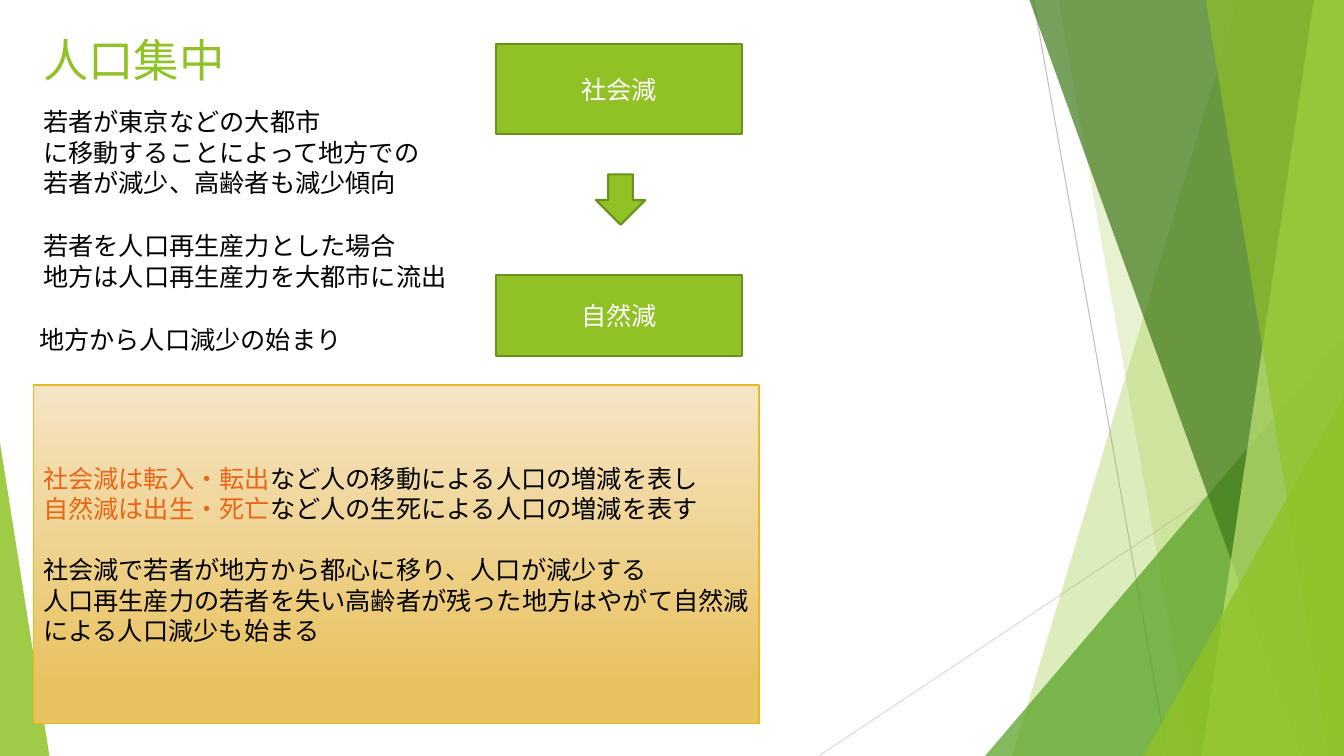
from lxml import etree
from pptx import Presentation
from pptx.dml.color import RGBColor
from pptx.enum.shapes import MSO_CONNECTOR, MSO_SHAPE
from pptx.enum.text import MSO_ANCHOR, PP_ALIGN
from pptx.oxml.ns import qn
from pptx.util import Inches, Pt

W, H = 13.33, 7.5
COLORS = {
    "lime": "90C226", "green": "54A021", "forest": "3F7819", "pale": "C0E474",
    "edge": "6B901C", "gold_edge": "E6B91E", "cream": "F5E5C5", "gold": "E9C260",
    "orange": "E76618", "black": "000000", "white": "FFFFFF",
    "gray": "BFBFBF", "light_gray": "D9D9D9",
}
CJK, LATIN = "Noto Sans CJK JP", "Roboto"

# Content: a paragraph is a list of (text, colour) runs
TITLE = "人口集中"
NOTES = [  # left, top, width, height, lines
    (0.33, 1.01, 4.97, 1.01, ["若者が東京などの大都市", "に移動することによって地方での",
                              "若者が減少、高齢者も減少傾向"]),
    (0.33, 2.24, 4.88, 0.71, ["若者を人口再生産力とした場合", "地方は人口再生産力を大都市に流出"]),
    (0.29, 3.17, 4.97, 0.4, ["地方から人口減少の始まり"]),
]
STEPS = [("社会減", 0.44, 0.89), ("自然減", 2.73, 0.8)]  # label, top, height
SUMMARY = [
    [("社会減は転入・転出".replace("・", "・"), "orange"), ("など人の移動による人口の増減を表し", "black")],
    [("自然減は出生・死亡".replace("・", "・"), "orange"), ("など人の生死による人口の増減を表す", "black")],
    [("社会減で若者が地方から都心に移り、人口が減少する", "black")],
    [("人口再生産力の若者を失い高齢者が残った地方はやがて自然減による人口減少も始まる", "black")],
]
SUMMARY_BREAK = 2  # paragraph that follows a gap

# Background, back to front
RAYS = [(10.25, 0, 11.58, H, "gray"), (W, 4.03, 8.12, H, "light_gray")]
FACETS = [  # bands: top x, bottom x; wedges: left, top, width, apex
    ("band", (12.28, 10.04), "lime", 30),
    ("band", (10.5, 11.83), "lime", 20),
    ("wedge", (9.77, 3.33, 3.56, 1), "green", 72),
    ("band", (10.21, 12.91), "forest", 70),
    ("band", (13.03, 11.92), "pale", 70),
    ("band", (11.96, 13.18), "lime", 65),
    ("wedge", (11.34, 3.93, 1.99, 1), "lime", 80),
    ("wedge", (0, 4.39, 0.49, 0), "lime", 85),
]

prs = Presentation()
prs.slide_width, prs.slide_height = Inches(W), Inches(H)
slide = prs.slides.add_slide(prs.slide_layouts[6])
shapes = slide.shapes


def rgb(name):
    return RGBColor.from_string(COLORS[name])


def paint(sp, fill, line=None, weight=1.5, alpha=None):
    sp.shadow.inherit = False
    sp.fill.solid()
    sp.fill.fore_color.rgb = rgb(fill)
    if alpha:
        clr = sp.fill._xPr.find(qn("a:solidFill"))[0]
        etree.SubElement(clr, qn("a:alpha"), val=str(alpha * 1000))
    if line:
        sp.line.color.rgb = rgb(line)
        sp.line.width = Pt(weight)
    else:
        sp.line.fill.background()


def add_box(kind, *box):
    return shapes.add_shape(kind, *map(Inches, box))


def write(sp, paragraphs, font, size=18, align=PP_ALIGN.LEFT, anchor=MSO_ANCHOR.MIDDLE):
    tf = sp.text_frame
    tf.word_wrap = True
    tf.vertical_anchor = anchor
    for i, runs in enumerate(paragraphs):
        p = tf.paragraphs[0] if i == 0 else tf.add_paragraph()
        p.alignment = align
        for text, color in runs:
            r = p.add_run()
            r.text = text
            r.font.name, r.font.size = font, Pt(size)
            r.font.color.rgb = rgb(color)
            r.font._element.find(qn("a:latin")).addnext(
                etree.Element(qn("a:ea"), typeface=CJK))
    return tf


# Thin rays
for x1, y1, x2, y2, color in RAYS:
    ray = shapes.add_connector(MSO_CONNECTOR.STRAIGHT, *map(Inches, (x1, y1, x2, y2)))
    ray.line.color.rgb = rgb(color)
    ray.line.width = Pt(0.75)
    etree.SubElement(ray._element.spPr, qn("a:effectLst"))

# Translucent facets
for kind, geometry, color, alpha in FACETS:
    if kind == "band":
        top_x, bottom_x = geometry
        corners = [(Inches(x), Inches(y)) for x, y in
                   ((top_x, 0), (W, 0), (W, H), (bottom_x, H))]
        builder = shapes.build_freeform(*corners[0])
        builder.add_line_segments(corners[1:], close=True)
        sp = builder.convert_to_shape()
    else:
        left, top, width, apex = geometry
        sp = add_box(MSO_SHAPE.ISOSCELES_TRIANGLE, left, top, width, H - top)
        sp.adjustments[0] = apex
    paint(sp, color, alpha=alpha)

# Title and notes
title = shapes.add_textbox(*map(Inches, (0.33, 0.26, 2.68, 0.65)))
write(title, [[(TITLE, "lime")]], LATIN, 32.4)
for *box, lines in NOTES:
    note = shapes.add_textbox(*map(Inches, box))
    write(note, [[(line, "black")] for line in lines], CJK, anchor=MSO_ANCHOR.TOP)

# Two steps joined by an arrow
for label, top, height in STEPS:
    step = add_box(MSO_SHAPE.RECTANGLE, 4.92, top, 2.44, height)
    paint(step, "lime", "edge")
    write(step, [[(label, "white")]], LATIN, align=PP_ALIGN.CENTER)
arrow = add_box(MSO_SHAPE.DOWN_ARROW, 5.91, 1.73, 0.49, 0.5)
paint(arrow, "lime", "edge")

# Summary panel
panel = add_box(MSO_SHAPE.RECTANGLE, 0.33, 3.82, 7.2, 3.36)
paint(panel, "gold", "gold_edge", 1)
panel.fill.gradient()
panel.fill.gradient_angle = 270
for stop, (position, color) in zip(panel.fill.gradient_stops, [(0, "cream"), (0.88, "gold")]):
    stop.position = position
    stop.color.rgb = rgb(color)
tf = write(panel, SUMMARY, LATIN)
tf.paragraphs[SUMMARY_BREAK].space_before = Pt(22)

prs.save("out.pptx")
